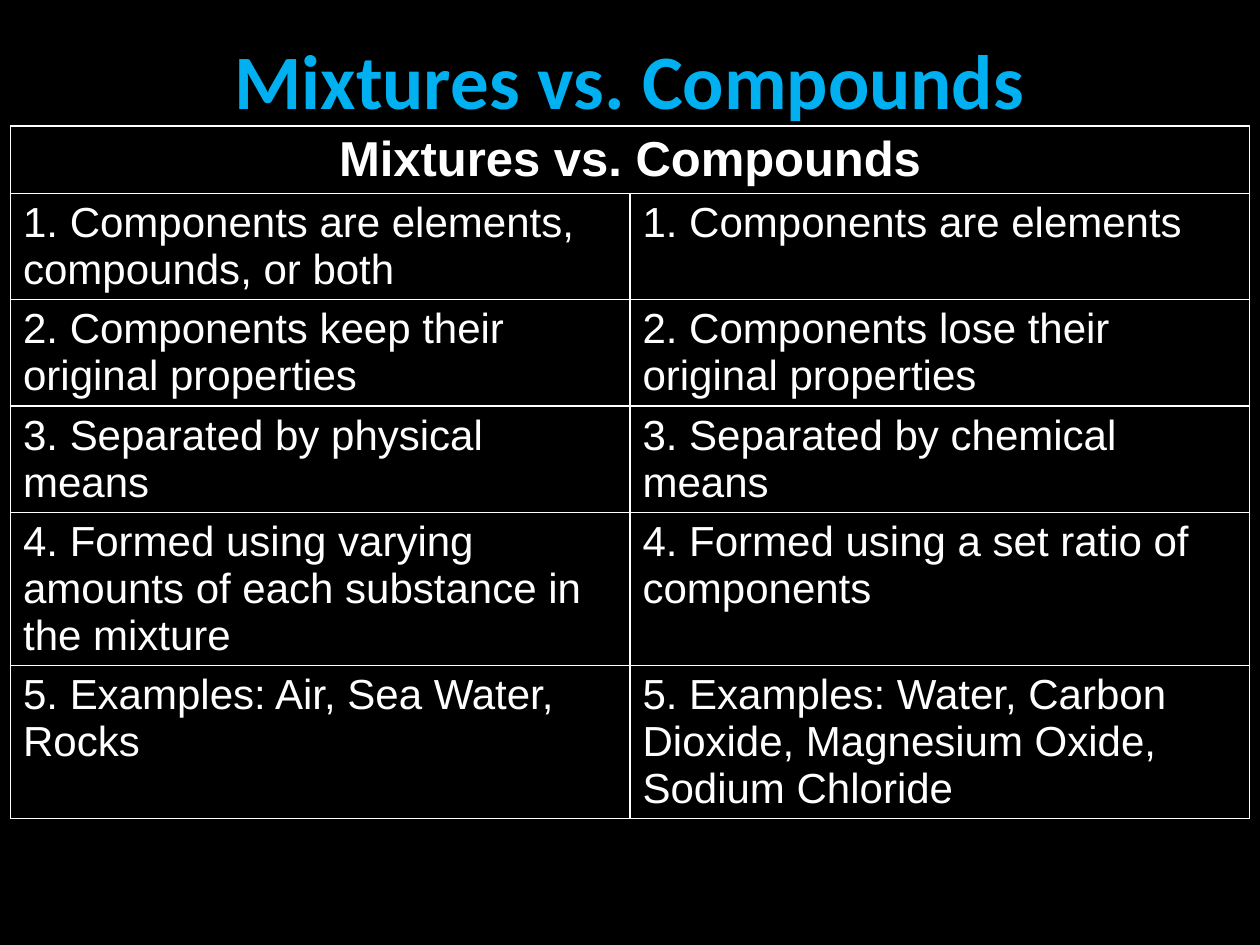
import pptx
import pptx.util
import pptx.dml.color
import pptx.enum.text
import pptx.oxml
import pptx.oxml.ns

Pt = pptx.util.Pt
ALIGN = pptx.enum.text.PP_ALIGN
ANCHOR = pptx.enum.text.MSO_ANCHOR
COLORS = {"background": "000000", "title": "00B0F0", "text": "FFFFFF", "border": "FFFFFF"}
HEADING = "Mixtures vs. Compounds"
ROWS = [
    ("1. Components are elements, compounds, or both", "1. Components are elements"),
    ("2. Components keep their original properties", "2. Components lose their original properties"),
    ("3. Separated by physical means", "3. Separated by chemical means"),
    ("4. Formed using varying amounts of each substance in the mixture",
     "4. Formed using a set ratio of components"),
    ("5. Examples: Air, Sea Water, Rocks",
     "5. Examples: Water, Carbon Dioxide, Magnesium Oxide, Sodium Chloride"),
]
ROW_HEIGHTS = [38.5, 60.5, 60.5, 60.5, 87.5, 87.5]


def rgb(name):
    return pptx.dml.color.RGBColor.from_string(COLORS[name])


def write(tf, text, size, font, color, bold=False, align=ALIGN.LEFT):
    p = tf.paragraphs[0]
    p.alignment = align
    r = p.add_run()
    r.text = text
    r.font.size = Pt(size)
    r.font.name = font
    r.font.bold = bold
    r.font.color.rgb = rgb(color)


def style_cell(cell):
    tcPr = cell._tc.get_or_add_tcPr()
    for side in ("lnL", "lnR", "lnT", "lnB"):
        tcPr.append(pptx.oxml.parse_xml(
            f'<a:{side} {pptx.oxml.ns.nsdecls("a")} w="{Pt(1)}"><a:solidFill>'
            f'<a:srgbClr val="{COLORS["border"]}"/></a:solidFill></a:{side}>'))
    cell.fill.background()


def add_title(s, left, top, width, height):
    sp = s.shapes.title
    sp.left, sp.top, sp.width, sp.height = Pt(left), Pt(top), Pt(width), Pt(height)
    tf = sp.text_frame
    tf.word_wrap = True
    tf.vertical_anchor = ANCHOR.MIDDLE
    write(tf, HEADING, 44, "Calibri", "title", True, ALIGN.CENTER)


def add_comparison(s, left, top, width, height):
    table = s.shapes.add_table(len(ROW_HEIGHTS), 2, Pt(left), Pt(top), Pt(width), Pt(height)).table
    table.first_row = table.horz_banding = False
    for column in table.columns:
        column.width = Pt(width / 2)
    for row, row_height in zip(table.rows, ROW_HEIGHTS):
        row.height = Pt(row_height)
        for cell in row.cells:
            style_cell(cell)

    header = table.cell(0, 0)
    header.merge(table.cell(0, 1))
    header.vertical_anchor = ANCHOR.MIDDLE
    write(header.text_frame, HEADING, 28, "Arial", "text", True, ALIGN.CENTER)
    for i, texts in enumerate(ROWS, 1):
        for j, text in enumerate(texts):
            write(table.cell(i, j).text_frame, text, 24, "Arial", "text")


def main():
    prs = pptx.Presentation()
    prs.slide_width, prs.slide_height = Pt(720), Pt(540)
    s = prs.slides.add_slide(prs.slide_layouts[5])
    s.background.fill.solid()
    s.background.fill.fore_color.rgb = rgb("background")
    add_title(s, 36, 0, 648, 90)
    add_comparison(s, 6, 72, 708, sum(ROW_HEIGHTS))
    prs.save("out.pptx")


if __name__ == "__main__":
    main()
